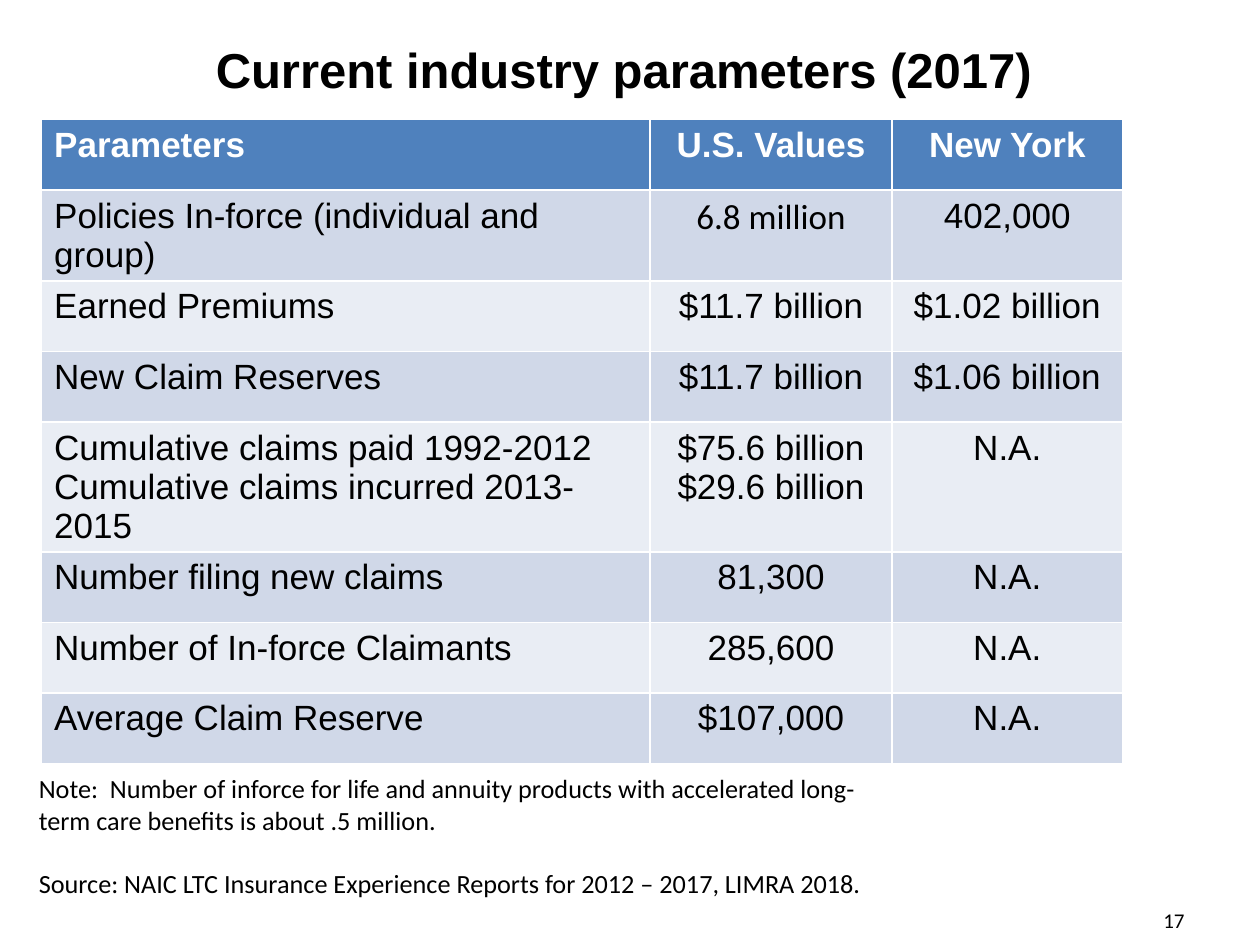
"""Build the slide on current industry parameters, a table with notes."""
import pptx
import pptx.dml.color
import pptx.enum.text
import pptx.util

ALIGN = pptx.enum.text.PP_ALIGN
ANCHOR = pptx.enum.text.MSO_ANCHOR
TITLE = "Current industry parameters (2017)"
ROWS = [
    (["Parameters"], ["U.S. Values"], ["New York"]),
    (["Policies In-force (individual and group)"], ["6.8 million"], ["402,000"]),
    (["Earned Premiums"], ["$11.7 billion"], ["$1.02 billion"]),
    (["New Claim Reserves"], ["$11.7 billion"], ["$1.06 billion"]),
    (
        ["Cumulative claims paid 1992-2012", "Cumulative claims incurred 2013-2015"],
        ["$75.6 billion", "$29.6 billion"],
        ["N.A."],
    ),
    (["Number filing new claims"], ["81,300"], ["N.A."]),
    (["Number of In-force Claimants"], ["285,600"], ["N.A."]),
    (["Average Claim Reserve"], ["$107,000"], ["N.A."]),
]
NOTES = [
    "Note:  Number of inforce for life and annuity products with accelerated "
    "long-term care benefits is about .5 million.",
    "Source: NAIC LTC Insurance Experience Reports for 2012 – 2017, LIMRA 2018.",
]
PAGE_NUMBER = "17"
COLUMN_WIDTHS = [4.83, 1.92, 1.83]
ROW_HEIGHT, TALL_ROW_HEIGHT = 0.56, 0.78
HEADER_FILL, BAND_FILLS = "4F81BD", ("E9EDF4", "D0D8E8")
BLACK, WHITE = "000000", "FFFFFF"


def inches(*lengths):
    return [pptx.util.Inches(length) for length in lengths]


def color(value):
    return pptx.dml.color.RGBColor.from_string(value)


def write(frame, lines, size, font="Arial", ink=BLACK, bold=False, align=ALIGN.LEFT, gap=0):
    for index, line in enumerate(lines):
        paragraph = frame.add_paragraph() if index else frame.paragraphs[0]
        paragraph.alignment = align
        if index and gap:
            paragraph.space_before = pptx.util.Pt(gap)
        run = paragraph.add_run()
        run.text = line
        run.font.name = font
        run.font.size = pptx.util.Pt(size)
        run.font.bold = bold
        run.font.color.rgb = color(ink)


def add_title(slide):
    title = slide.shapes.title
    title.left, title.top, title.width, title.height = inches(0.67, 0.23, 8.56, 0.63)
    title.text_frame.vertical_anchor = ANCHOR.MIDDLE
    write(title.text_frame, [TITLE], 28, bold=True, align=ALIGN.CENTER)


def add_parameters(slide):
    heights = [TALL_ROW_HEIGHT if len(row[0]) > 1 else ROW_HEIGHT for row in ROWS]
    place = inches(0.33, 0.95, sum(COLUMN_WIDTHS), sum(heights))
    table = slide.shapes.add_table(len(ROWS), len(COLUMN_WIDTHS), *place).table
    for column, width in zip(table.columns, inches(*COLUMN_WIDTHS)):
        column.width = width
    for row, height in zip(table.rows, inches(*heights)):
        row.height = height
    for row_index, row in enumerate(ROWS):
        header = row_index == 0
        for column_index, lines in enumerate(row):
            cell = table.cell(row_index, column_index)
            cell.fill.solid()
            cell.fill.fore_color.rgb = color(HEADER_FILL if header else BAND_FILLS[row_index % 2])
            write(
                cell.text_frame,
                lines,
                20,
                font="Calibri" if (row_index, column_index) == (1, 1) else "Arial",
                ink=WHITE if header else BLACK,
                bold=header,
                align=ALIGN.CENTER if column_index else ALIGN.LEFT,
            )


def add_text(slide, place, lines, size, anchor=ANCHOR.TOP, **style):
    frame = slide.shapes.add_textbox(*inches(*place)).text_frame
    frame.word_wrap = True
    frame.vertical_anchor = anchor
    write(frame, lines, size, font="Calibri", **style)


def main():
    presentation = pptx.Presentation()
    presentation.slide_width, presentation.slide_height = inches(10, 7.5)
    slide = presentation.slides.add_slide(presentation.slide_layouts.get_by_name("Title Only"))
    add_title(slide)
    add_parameters(slide)
    add_text(slide, (0.21, 6.08, 7, 1.11), NOTES, 15, gap=18)
    add_text(slide, (7.17, 7.1, 2.33, 0.4), [PAGE_NUMBER], 12, ANCHOR.MIDDLE, align=ALIGN.RIGHT)
    presentation.save("out.pptx")


if __name__ == "__main__":
    main()
